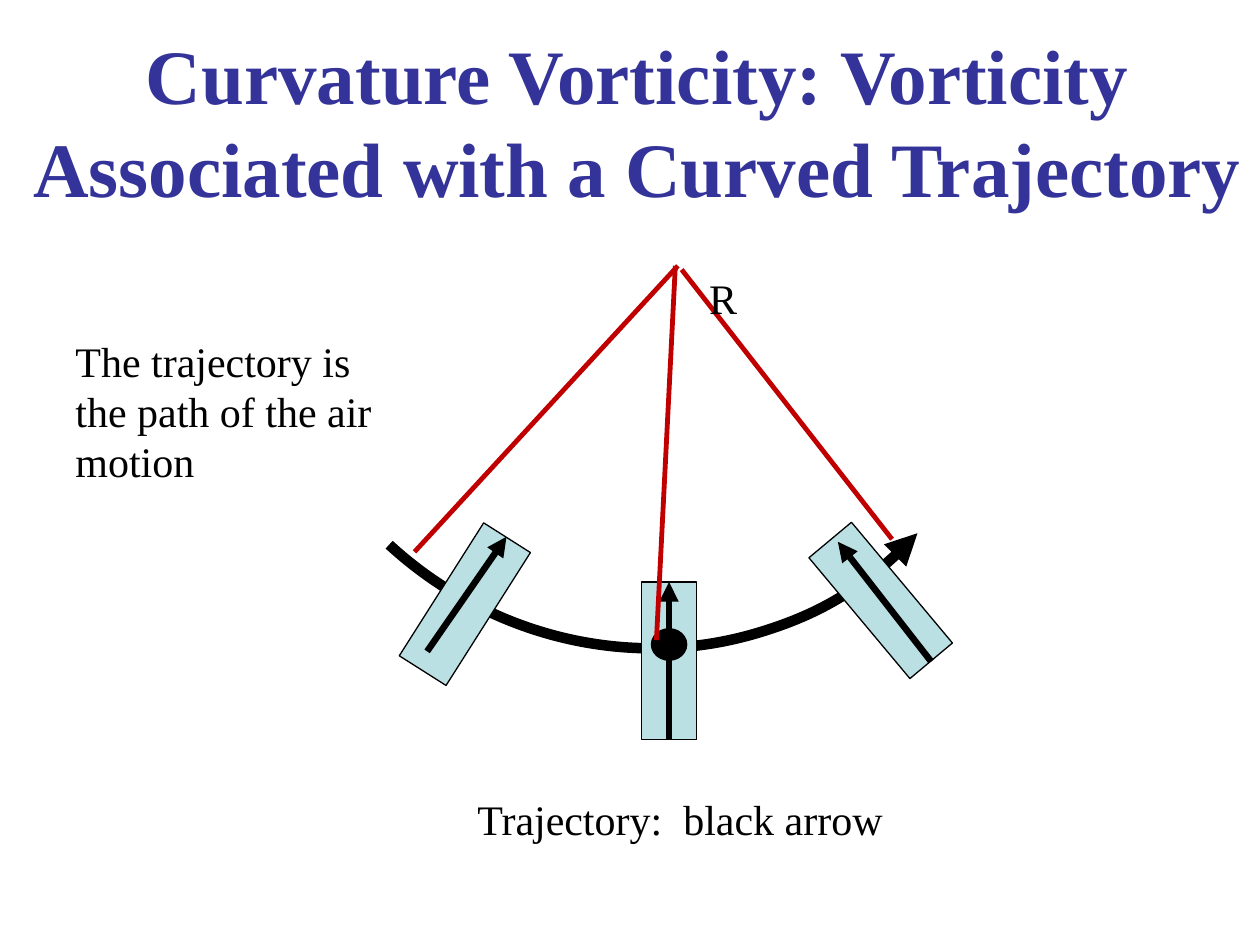
from dataclasses import dataclass

import pptx
import pptx.dml.color
import pptx.enum.shapes
import pptx.enum.text
import pptx.oxml.ns
import pptx.util
from lxml import etree

SCALE = 9144
FACE = "Times New Roman"
BLACK, RED, AQUA, NAVY = "000000", "C00000", "BBE0E3", "333399"
Kind = pptx.enum.shapes.MSO_SHAPE
Fit = pptx.enum.text.MSO_AUTO_SIZE


@dataclass
class Box:
    left: int
    top: int
    width: int
    height: int
    turn: float = 0


@dataclass
class Ray:
    start: tuple[int, int]
    end: tuple[int, int]


@dataclass
class Note:
    text: str
    box: Box
    wrap: bool = False


PARCELS = [
    Box(347, 417, 44, 125, 32.4),
    Box(509, 462, 44, 125),
    Box(677, 414, 44, 125, 320.1),
]
ARROWS = [
    Ray((739, 525), (665, 430)),
    Ray((531, 587), (531, 462)),
    Ray((339, 517), (402, 426)),
]
RADII = [
    Ray((329, 438), (538, 211)),
    Ray((521, 508), (536, 211)),
    Ray((708, 428), (541, 214)),
]
NOTES = [
    Note("Trajectory:  black arrow", Box(369, 625, 345, 50)),
    Note("R", Box(553, 211, 43, 50)),
    Note("The trajectory is the path of the air motion", Box(50, 261, 261, 131), True),
]


def px(size: int) -> int:
    return size * SCALE


def frame(box: Box) -> tuple[int, ...]:
    return tuple(map(px, (box.left, box.top, box.width, box.height)))


def color(code: str) -> pptx.dml.color.RGBColor:
    return pptx.dml.color.RGBColor.from_string(code)


def stroke(item, code: str, width: float, tip: str = "") -> None:
    item.line.color.rgb = color(code)
    item.line.width = pptx.util.Pt(width)
    if tip:
        line = item.line._get_or_add_ln()
        etree.SubElement(line, pptx.oxml.ns.qn(f"a:{tip}"), type="triangle")


def shape(slide, kind, box: Box, fill: str = "", width: float = 0.75, tip: str = "") -> None:
    item = slide.shapes.add_shape(kind, *frame(box))
    item.rotation = box.turn
    item.shadow.inherit = False
    if fill:
        item.fill.solid()
        item.fill.fore_color.rgb = color(fill)
    else:
        item.fill.background()
    stroke(item, BLACK, width, tip)


def link(slide, ray: Ray, code: str, width: float, tip: str = "") -> None:
    kind = pptx.enum.shapes.MSO_CONNECTOR.STRAIGHT
    item = slide.shapes.add_connector(kind, *map(px, ray.start + ray.end))
    stroke(item, code, width, tip)
    etree.SubElement(item._element.spPr, pptx.oxml.ns.qn("a:effectLst"))


def write(part, text: str, size: int, code: str, bold: bool = False) -> None:
    run = part.add_run()
    run.text = text
    run.font.name = FACE
    run.font.size = pptx.util.Pt(size)
    run.font.bold = bold
    run.font.color.rgb = color(code)


def label(slide, note: Note) -> None:
    body = slide.shapes.add_textbox(*frame(note.box)).text_frame
    body.word_wrap = note.wrap
    body.auto_size = Fit.SHAPE_TO_FIT_TEXT
    write(body.paragraphs[0], note.text, 24, BLACK)


def head(slide, text: str, box: Box) -> None:
    title = slide.shapes.title
    title.left, title.top, title.width, title.height = frame(box)
    body = title.text_frame
    body.auto_size = Fit.NONE
    body.word_wrap = True
    body.vertical_anchor = pptx.enum.text.MSO_ANCHOR.MIDDLE
    part = body.paragraphs[0]
    part.alignment = pptx.enum.text.PP_ALIGN.CENTER
    write(part, text, 44, NAVY, True)


def main() -> None:
    deck = pptx.Presentation()
    deck.slide_width, deck.slide_height = px(1000), px(750)
    slide = deck.slides.add_slide(deck.slide_layouts.get_by_name("Title Only"))
    head(
        slide,
        "Curvature Vorticity: Vorticity Associated with a Curved Trajectory",
        Box(10, 33, 992, 125),
    )
    shape(slide, Kind.ARC, Box(215, -84, 581, 605, 132.6), width=6, tip="headEnd")
    for box in PARCELS:
        shape(slide, Kind.RECTANGLE, box, AQUA)
    shape(slide, Kind.OVAL, Box(517, 499, 28, 25), BLACK)
    for ray in ARROWS:
        link(slide, ray, BLACK, 3.75, "tailEnd")
    for ray in RADII:
        link(slide, ray, RED, 2.75)
    for note in NOTES:
        label(slide, note)
    deck.save("out.pptx")


if __name__ == "__main__":
    main()
